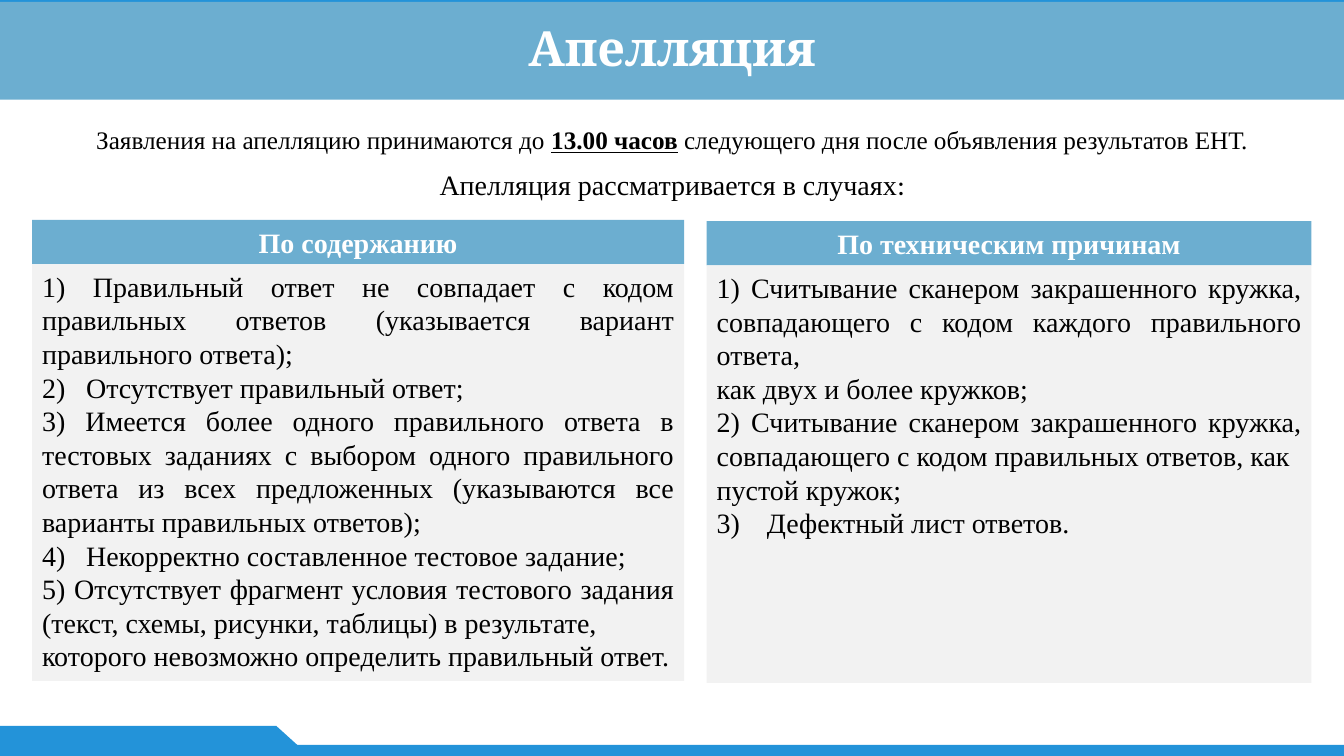
import pptx
import pptx.util
import pptx.dml.color
import pptx.enum.shapes
import pptx.enum.text
import pptx.oxml.ns
import lxml.etree

Cm = pptx.util.Cm
Pt = pptx.util.Pt
RGBColor = pptx.dml.color.RGBColor
SHAPE = pptx.enum.shapes.MSO_SHAPE
ALIGN = pptx.enum.text.PP_ALIGN
ANCHOR = pptx.enum.text.MSO_ANCHOR

WHITE = RGBColor(0xFF, 0xFF, 0xFF)
BLACK = RGBColor(0, 0, 0)
EDGE_BLUE = RGBColor(0x23, 0x93, 0xD9)
HEADER_BLUE = RGBColor(0x6C, 0xAE, 0xD0)
PANEL_GREY = RGBColor(0xF2, 0xF2, 0xF2)
SERIF = "Times New Roman"
WIDTH, HEIGHT = 33.87, 19.05
ITEM_TAB = 1.11
NUMBER_INDENT = 1.27

CONTENT_REASONS = [
    "1) Правильный ответ не совпадает с кодом правильных ответов "
    "(указывается вариант правильного ответа);",
    "2)\tОтсутствует правильный ответ;",
    "3) Имеется более одного правильного ответа в тестовых заданиях с выбором одного "
    "правильного ответа из всех предложенных (указываются все варианты правильных ответов);",
    "4)\tНекорректно составленное тестовое задание;",
    "5) Отсутствует фрагмент условия тестового задания "
    "(текст, схемы, рисунки, таблицы) в результате,",
    "которого невозможно определить правильный ответ.",
]
TECHNICAL_REASONS = [
    "1) Считывание сканером закрашенного кружка, совпадающего с кодом "
    "каждого правильного ответа,",
    "как двух и более кружков;",
    "2) Считывание сканером закрашенного кружка, совпадающего с кодом "
    "правильных ответов, как",
    "пустой кружок;",
    "Дефектный лист ответов.",
]


def add_block(slide, box, color, preset=SHAPE.RECTANGLE):
    """Add a flat filled shape in the box (left, top, width, height in cm)."""
    block = slide.shapes.add_shape(preset, *map(Cm, box))
    block.shadow.inherit = False
    block.fill.solid()
    block.fill.fore_color.rgb = color
    block.line.fill.background()
    return block


def style_run(run, size, color, font=SERIF, bold=False, underline=False):
    """Set the typeface, size and colour of a run."""
    run.font.name = font
    run.font.size = Pt(size)
    run.font.bold = bold
    run.font.underline = underline
    run.font.color.rgb = color


def add_heading(slide, box, text, size, font=SERIF):
    """Add a blue bar with a centred white bold heading."""
    bar = add_block(slide, box, HEADER_BLUE)
    bar.text_frame.text = text
    heading = bar.text_frame.paragraphs[0]
    heading.alignment = ALIGN.CENTER
    style_run(heading.runs[0], size, WHITE, font, bold=True)
    return heading


def add_edges(slide, width, height):
    """Add the blue strips at the top and bottom and the slanted corner tab."""
    strip, tab_height, tab_width, slant = 0.28, 0.76, 6.96, 1.68
    tab_top = height - tab_height
    add_block(slide, (0, 0, width, strip), EDGE_BLUE)
    add_block(slide, (0, height - strip, width, strip), EDGE_BLUE)
    add_block(slide, (0, tab_top, tab_width, tab_height), EDGE_BLUE)
    corner = add_block(slide, (tab_width - slant / 2, tab_top, slant, tab_height),
                       EDGE_BLUE, SHAPE.FLOWCHART_MERGE)
    corner.rotation = 180


def add_line(slide, box, parts, size, wrap=True):
    """Add a centred line made of (text, run options) parts."""
    frame = slide.shapes.add_textbox(*map(Cm, box)).text_frame
    frame.word_wrap = wrap
    line = frame.paragraphs[0]
    line.alignment = ALIGN.CENTER
    for text, options in parts:
        run = line.add_run()
        run.text = text
        style_run(run, size, BLACK, **options)


def add_tab_stop(paragraph, position):
    """Add a left tab stop at the position in cm."""
    stops = lxml.etree.SubElement(paragraph._p.get_or_add_pPr(),
                                  pptx.oxml.ns.qn("a:tabLst"))
    lxml.etree.SubElement(stops, pptx.oxml.ns.qn("a:tab"),
                          pos=str(Cm(position)), algn="l")


def number_paragraph(paragraph, start):
    """Number the paragraph from start with a hanging indent."""
    properties = paragraph._p.get_or_add_pPr()
    properties.set("marL", str(Cm(NUMBER_INDENT)))
    properties.set("indent", str(-Cm(NUMBER_INDENT)))
    lxml.etree.SubElement(properties, pptx.oxml.ns.qn("a:buFont"), typeface="+mj-lt")
    lxml.etree.SubElement(properties, pptx.oxml.ns.qn("a:buAutoNum"),
                          type="arabicParenR", startAt=str(start))


def add_reasons(slide, box, heading, reasons):
    """Add a column: a heading bar over a grey panel of reasons."""
    left, top, width, height = box
    bar_height = 1.12
    add_heading(slide, (left, top, width, bar_height), heading, 20)
    panel = add_block(slide, (left, top + bar_height, width, height - bar_height), PANEL_GREY)
    frame = panel.text_frame
    frame.vertical_anchor = ANCHOR.TOP
    frame.text = "\n".join(reasons)
    for reason in frame.paragraphs:
        reason.alignment = ALIGN.JUSTIFY
        if "\t" in reason.text:
            add_tab_stop(reason, ITEM_TAB)
        for run in reason.runs:
            style_run(run, 20, BLACK)
    return frame.paragraphs


def build_appeal_slide(slide):
    """Lay out the appeal slide."""
    add_edges(slide, WIDTH, HEIGHT)
    title = add_heading(slide, (0, 0.05, WIDTH, 2.46), "Апелляция", 34.7, "Cambria")
    title.line_spacing = 0.9
    add_line(slide, (0.81, 3.02, 32.26, 1.02), [
        ("Заявления на апелляцию принимаются до ", {}),
        ("13.00 часов", {"bold": True, "underline": True}),
        (" следующего дня после объявления результатов ЕНТ.", {}),
    ], 18)
    add_line(slide, (10.77, 4.09, 12.34, 1.12), [
        ("Апелляция рассматривается в случаях", {}),
        (":", {"font": "Calibri"}),
    ], 20, wrap=False)
    add_reasons(slide, (0.81, 5.54, 16.43, 11.62), "По содержанию", CONTENT_REASONS)
    technical = add_reasons(slide, (17.81, 5.57, 15.24, 11.64),
                            "По техническим причинам", TECHNICAL_REASONS)
    number_paragraph(technical[-1], 3)


def main():
    """Build and save the presentation."""
    deck = pptx.Presentation()
    deck.slide_width, deck.slide_height = Cm(WIDTH), Cm(HEIGHT)
    build_appeal_slide(deck.slides.add_slide(deck.slide_layouts[6]))
    deck.save("out.pptx")


if __name__ == "__main__":
    main()
